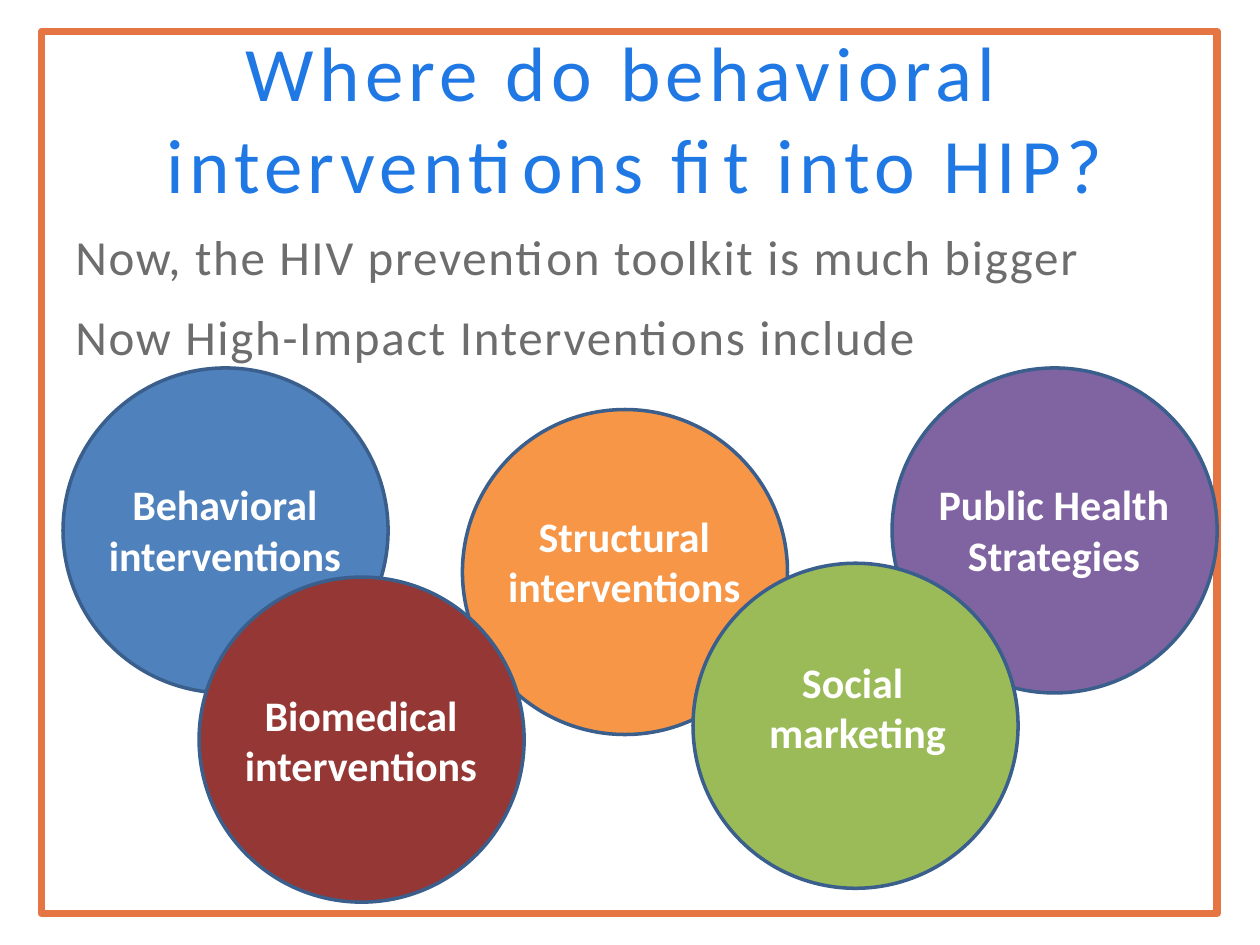
from pptx import Presentation
from pptx.dml.color import RGBColor
from pptx.enum.shapes import MSO_SHAPE
from pptx.enum.text import MSO_ANCHOR, MSO_AUTO_SIZE, PP_ALIGN
from pptx.util import Inches, Pt

RECTANGLE, OVAL = MSO_SHAPE.RECTANGLE, MSO_SHAPE.OVAL
TOP, MIDDLE = MSO_ANCHOR.TOP, MSO_ANCHOR.MIDDLE
LEFT, CENTER = PP_ALIGN.LEFT, PP_ALIGN.CENTER
NO_AUTOFIT = MSO_AUTO_SIZE.NONE

ORANGE_FRAME = RGBColor(0xE5, 0x75, 0x43)
TITLE_BLUE = RGBColor(0x1F, 0x78, 0xE3)
GRAY = RGBColor(0x6D, 0x6D, 0x6D)
WHITE = RGBColor(0xFF, 0xFF, 0xFF)
OUTLINE = RGBColor(0x3A, 0x5F, 0x8C)
BLUE = RGBColor(0x4F, 0x81, 0xBD)
PURPLE = RGBColor(0x80, 0x64, 0xA2)
ORANGE = RGBColor(0xF7, 0x96, 0x46)
GREEN = RGBColor(0x9B, 0xBB, 0x59)
RED = RGBColor(0x95, 0x37, 0x35)

INTERVENTIONS = [
    ("Behavioral interventions", BLUE, 0.5, 2.92, 0.16, 0.83),
    ("Public Health Strategies", PURPLE, 7.08, 2.92, 0.16, 0.83),
    ("Structural interventions", ORANGE, 3.67, 3.25, 0.16, 0.75),
    ("Social \vmarketing", GREEN, 5.5, 4.47, 0.18, 0.69),
    ("Biomedical interventions", RED, 1.58, 4.58, 0.16, 0.84),
]


class SlideBuilder:
    """Draws styled elements on the current slide."""

    font_name = "Calibri"
    diameter = 2.58
    label_size = (2.25, 0.91)

    def __init__(self, slide):
        self.slide = slide

    def set_text(self, frame, lines, size, color, align, anchor=TOP, bold=False, spacing=0, gap=0):
        frame.word_wrap = True
        frame.auto_size = NO_AUTOFIT
        frame.vertical_anchor = anchor
        frame.text = "\n".join(lines)
        for index, paragraph in enumerate(frame.paragraphs):
            paragraph.alignment = align
            paragraph.space_before = Pt(gap if index else 0)
            font = paragraph.font
            font.name, font.size, font.bold = self.font_name, Pt(size), bold
            font.color.rgb = color
            if spacing:
                for run in paragraph.runs:
                    run.font._element.set("spc", str(spacing * 100))

    def title(self, text, left, top, width, height):
        title = self.slide.shapes.title
        title.left, title.top = Inches(left), Inches(top)
        title.width, title.height = Inches(width), Inches(height)
        self.set_text(title.text_frame, [text], 44, TITLE_BLUE, CENTER, MIDDLE, spacing=3)

    def border(self, left, top, width, height):
        border = self.slide.shapes.add_shape(
            RECTANGLE, Inches(left), Inches(top), Inches(width), Inches(height))
        border.shadow.inherit = False
        border.fill.background()
        border.line.color.rgb = ORANGE_FRAME
        border.line.width = Pt(4.25)

    def body(self, lines, left, top, width, height):
        body = self.slide.shapes.add_textbox(
            Inches(left), Inches(top), Inches(width), Inches(height))
        self.set_text(body.text_frame, lines, 28, GRAY, LEFT, spacing=1, gap=12)

    def circle(self, text, color, left, top, label_dx, label_dy):
        group = self.slide.shapes.add_group_shape()
        circle = group.shapes.add_shape(
            OVAL, Inches(left), Inches(top), Inches(self.diameter), Inches(self.diameter))
        circle.shadow.inherit = False
        circle.fill.solid()
        circle.fill.fore_color.rgb = color
        circle.line.color.rgb = OUTLINE
        circle.line.width = Pt(2)
        width, height = self.label_size
        label = group.shapes.add_textbox(
            Inches(left + label_dx), Inches(top + label_dy), Inches(width), Inches(height))
        self.set_text(label.text_frame, [text], 24, WHITE, CENTER, bold=True)


def main():
    deck = Presentation()
    deck.slide_width, deck.slide_height = Inches(10), Inches(7.5)
    title_only = deck.slide_layouts[5]
    builder = SlideBuilder(deck.slides.add_slide(title_only))

    builder.border(0.33, 0.25, 9.33, 7)
    builder.title("Where do behavioral \vinterventions fit into HIP?", -0.42, 0.3, 10.92, 1.25)
    builder.body(
        ["Now, the HIV prevention toolkit is much bigger",
         "Now High-Impact Interventions include"],
        0.5, 1.75, 9, 5.5)
    for intervention in INTERVENTIONS:
        builder.circle(*intervention)

    deck.save("out.pptx")


if __name__ == "__main__":
    main()
